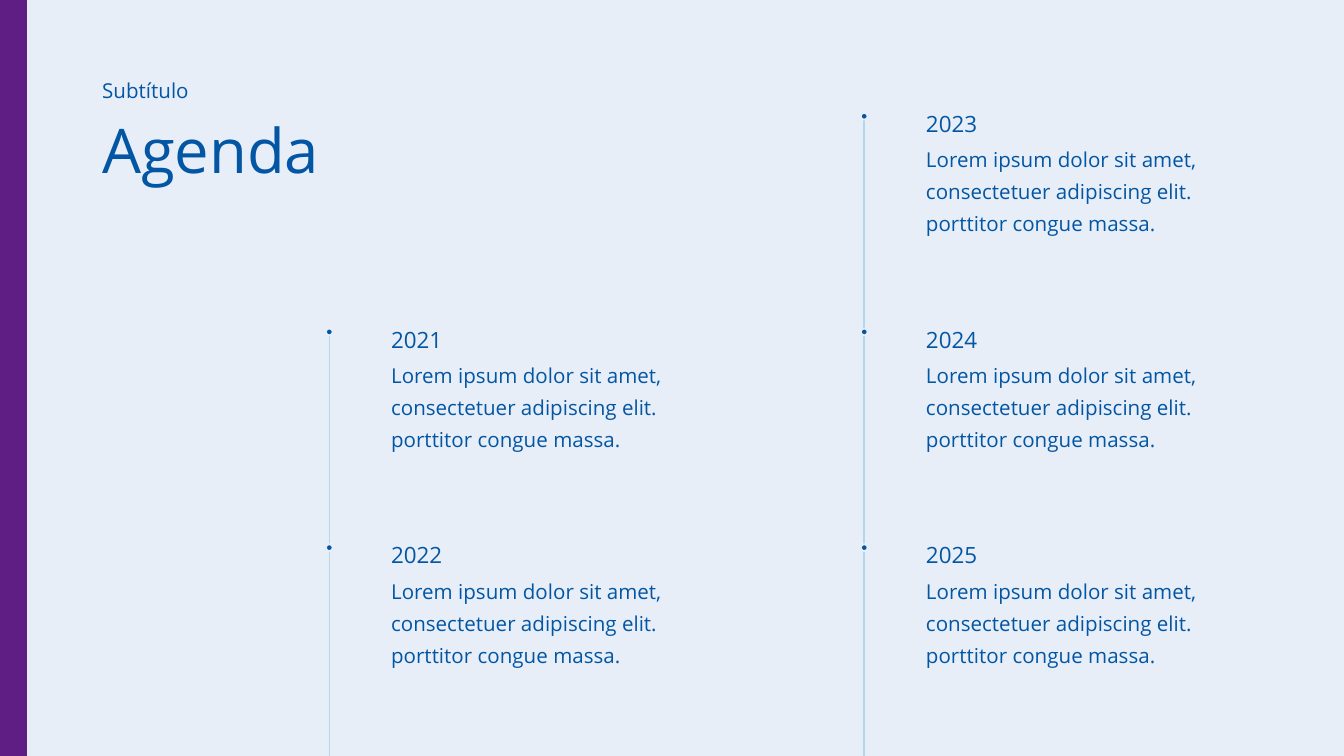
"""Build an agenda slide with two vertical timelines."""
from dataclasses import dataclass

from lxml import etree
from pptx import Presentation
from pptx.dml.color import RGBColor
from pptx.enum.shapes import MSO_CONNECTOR, MSO_SHAPE
from pptx.enum.text import MSO_ANCHOR, MSO_AUTO_SIZE, PP_ALIGN
from pptx.oxml.ns import qn
from pptx.util import Inches, Pt

STRAIGHT = MSO_CONNECTOR.STRAIGHT
RECTANGLE, OVAL = MSO_SHAPE.RECTANGLE, MSO_SHAPE.OVAL
TOP, LEFT = MSO_ANCHOR.TOP, PP_ALIGN.LEFT
GROW = MSO_AUTO_SIZE.SHAPE_TO_FIT_TEXT

WIDTH, HEIGHT = 10, 5.625
PALE, BLUE, SKY, PURPLE = "E8EEF8", "0256A3", "B4D6EA", "5E1E84"
FONT = "Open Sans"
FIRST_ROW, ROW_STEP = 0.72, 1.605
DOT = 0.05
DESCRIPTION = ("Lorem ipsum dolor sit amet, consectetuer adipiscing elit. "
               "porttitor congue massa.")


@dataclass
class Timeline:
    x: float
    first_row: int
    years: list[str]


TIMELINES = [
    Timeline(2.45, 1, ["2021", "2022"]),
    Timeline(6.43, 0, ["2023", "2024", "2025"]),
]


def color(value: str) -> RGBColor:
    return RGBColor.from_string(value)


def write(box, text: str, size: float, spacing: float = 1.0) -> None:
    frame = box.text_frame
    frame.word_wrap = True
    frame.auto_size = GROW
    frame.vertical_anchor = TOP
    frame.margin_left = frame.margin_right = Inches(0.07)
    frame.margin_top = frame.margin_bottom = Inches(0.04)
    frame.text = text
    paragraph = frame.paragraphs[0]
    paragraph.alignment = LEFT
    paragraph.line_spacing = spacing
    font = paragraph.runs[0].font
    font.name, font.size = FONT, Pt(size)
    font.color.rgb = color(BLUE)


def add_text(slide, x: float, y: float, width: float, height: float,
             text: str, size: float, spacing: float = 1.0) -> None:
    box = slide.shapes.add_textbox(Inches(x), Inches(y), Inches(width), Inches(height))
    write(box, text, size, spacing)


def add_filled(slide, kind, x: float, y: float, width: float, height: float, fill: str):
    shape = slide.shapes.add_shape(kind, Inches(x), Inches(y), Inches(width), Inches(height))
    shape.shadow.inherit = False
    shape.fill.solid()
    shape.fill.fore_color.rgb = color(fill)
    shape.line.fill.background()
    return shape


def add_axis(slide, x: float, top: float) -> None:
    axis = slide.shapes.add_connector(STRAIGHT, Inches(x), Inches(top), Inches(x), Inches(HEIGHT))
    axis.line.color.rgb = color(SKY)
    axis.line.width = Pt(0.75)
    etree.SubElement(axis._element.spPr, qn("a:effectLst"))


def add_milestone(slide, x: float, y: float, year: str) -> None:
    add_text(slide, x + 0.39, y + 0.28, 2.34, 0.74, DESCRIPTION, 11, 1.3)
    add_text(slide, x + 0.39, y, 2.34, 0.28, year, 12, 1.3)
    dot = add_filled(slide, OVAL, x - DOT / 2, y + 0.12, DOT, DOT, BLUE)
    dot.line.color.rgb = color(PALE)
    dot.line.width = Pt(1)


def add_timeline(slide, timeline: Timeline) -> None:
    top = FIRST_ROW + timeline.first_row * ROW_STEP
    add_axis(slide, timeline.x, top + 0.12 + DOT)
    for row, year in enumerate(timeline.years):
        add_milestone(slide, timeline.x, top + row * ROW_STEP, year)


def main() -> None:
    deck = Presentation()
    deck.slide_width, deck.slide_height = Inches(WIDTH), Inches(HEIGHT)
    slide = deck.slides.add_slide(deck.slide_layouts[5])
    slide.background.fill.solid()
    slide.background.fill.fore_color.rgb = color(PALE)

    title = slide.shapes.title
    title.left, title.top = Inches(0.69), Inches(0.79)
    title.width, title.height = Inches(3.62), Inches(0.63)
    write(title, "Agenda", 33)
    add_text(slide, 0.69, 0.54, 1.85, 0.26, "Subtítulo", 11)

    for timeline in TIMELINES:
        add_timeline(slide, timeline)
    add_filled(slide, RECTANGLE, 0, 0, 0.2, HEIGHT, PURPLE)
    deck.save("out.pptx")


if __name__ == "__main__":
    main()
